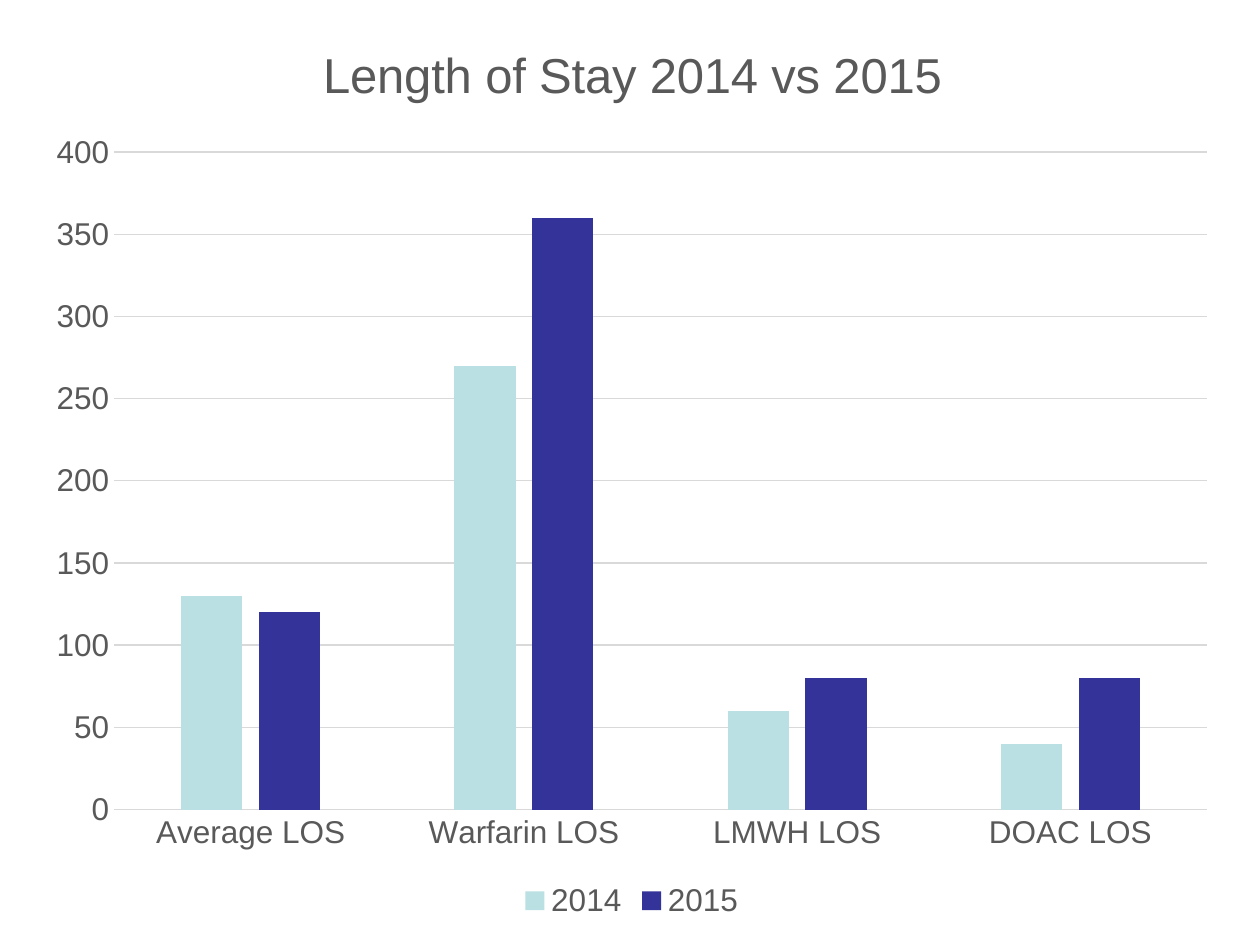
from dataclasses import dataclass

from lxml import etree
from pptx import Presentation
from pptx.chart.data import CategoryChartData
from pptx.dml.color import RGBColor
from pptx.enum.chart import XL_CHART_TYPE, XL_LEGEND_POSITION, XL_TICK_MARK
from pptx.oxml.ns import qn
from pptx.util import Inches, Pt

COLUMNS = XL_CHART_TYPE.COLUMN_CLUSTERED
BOTTOM = XL_LEGEND_POSITION.BOTTOM
NO_TICK = XL_TICK_MARK.NONE
BLANK_LAYOUT = 6


@dataclass(frozen=True)
class Theme:
    font: str = "Arial"
    base: str = "000000"
    text: str = "595959"
    rule: str = "D9D9D9"
    rule_width: float = 0.75
    title_size: int = 28
    label_size: int = 18
    base_size: int = 10
    years: tuple = ("BBE0E3", "333399")


THEME = Theme()

GROUPS = ["Average LOS", "Warfarin LOS", "LMWH LOS", "DOAC LOS"]
STAYS = {"2014": (130, 270, 60, 40), "2015": (120, 360, 80, 80)}


def format_font(font, size=THEME.label_size, color=THEME.text):
    font.name = THEME.font
    font.size = Pt(size)
    font.bold = False
    font.color.rgb = RGBColor.from_string(color)


def write_text(frame, text, **style):
    frame.text = text
    format_font(frame.paragraphs[0].runs[0].font, **style)


def format_rule(line):
    line.color.rgb = RGBColor.from_string(THEME.rule)
    line.width = Pt(THEME.rule_width)


def place_part(part, **settings):
    """Set a chart part's place as shares of the chart's size."""
    layout = part.find(qn("c:layout"))
    if layout is None:
        layout = etree.Element(qn("c:layout"))
        text = part.find(qn("c:tx"))
        part.insert(0 if text is None else part.index(text) + 1, layout)
    for old in list(layout):
        layout.remove(old)
    manual = etree.SubElement(layout, qn("c:manualLayout"))
    for setting, value in settings.items():
        etree.SubElement(manual, qn(f"c:{setting}")).set("val", str(value))


def format_axes(chart):
    for axis in (chart.category_axis, chart.value_axis):
        axis.major_tick_mark = axis.minor_tick_mark = NO_TICK
        format_font(axis.tick_labels.font)
    format_rule(chart.category_axis.format.line)

    stay_axis = chart.value_axis
    stay_axis.minimum_scale, stay_axis.maximum_scale = 0, 400
    stay_axis.major_unit = 50
    stay_axis.format.line.fill.background()
    stay_axis.has_major_gridlines = True
    format_rule(stay_axis.major_gridlines.format.line)


def add_stay_chart(slide, left, top, width, height):
    stay_data = CategoryChartData()
    stay_data.categories = GROUPS
    for year, stays in STAYS.items():
        stay_data.add_series(year, stays)
    chart = slide.shapes.add_chart(
        COLUMNS, left, top, width, height, stay_data).chart
    format_font(chart.font, size=THEME.base_size, color=THEME.base)

    # Title
    chart.has_title = True
    heading = chart.chart_title
    write_text(heading.text_frame, "Length of Stay 2014 vs 2015",
               size=THEME.title_size)
    heading.include_in_layout = False
    place_part(heading.format.element if hasattr(heading.format, "element")
               else chart.element.find(".//" + qn("c:title")),
               xMode="edge", yMode="edge", x=0.235, y=0.011)

    # Plot area and axes
    place_part(chart.element.find(".//" + qn("c:plotArea")),
               layoutTarget="inner", xMode="edge", yMode="edge",
               x=0.068, y=0.141, w=0.912, h=0.731)
    format_axes(chart)

    # Columns, one colour for each year
    plot = chart.plots[0]
    plot.gap_width, plot.overlap = 219, -27
    plot.vary_by_categories = False
    for year, color in zip(plot.series, THEME.years):
        year.invert_if_negative = False
        year.format.fill.solid()
        year.format.fill.fore_color.rgb = RGBColor.from_string(color)

    # Legend
    chart.has_legend = True
    chart.legend.position = BOTTOM
    chart.legend.include_in_layout = False
    format_font(chart.legend.font)


def main():
    deck = Presentation()
    deck.slide_width, deck.slide_height = Inches(10), Inches(7.5)
    slide = deck.slides.add_slide(deck.slide_layouts[BLANK_LAYOUT])
    add_stay_chart(slide, Inches(0.26), Inches(0.2), Inches(9.51), Inches(7.14))
    deck.save("out.pptx")


if __name__ == "__main__":
    main()
